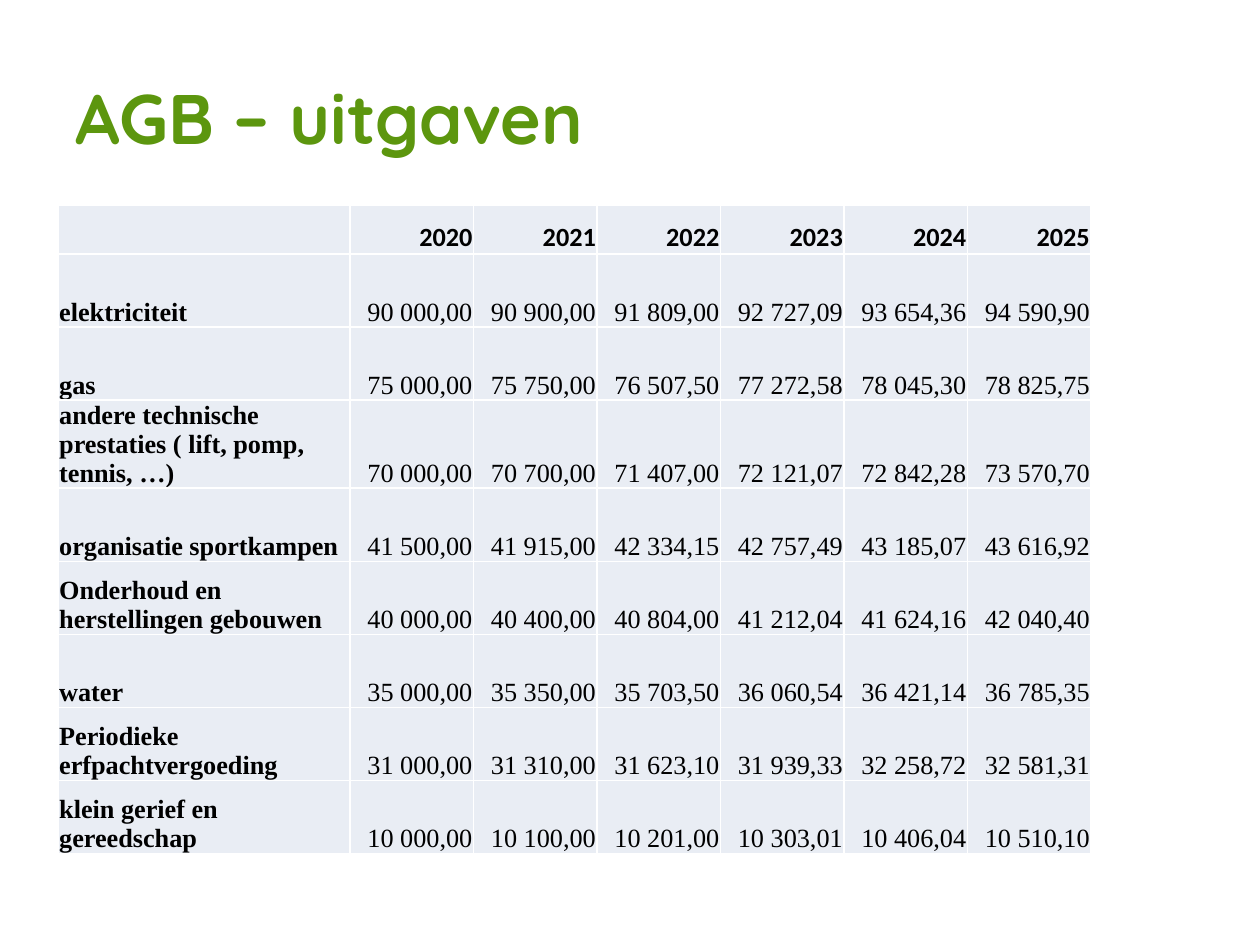
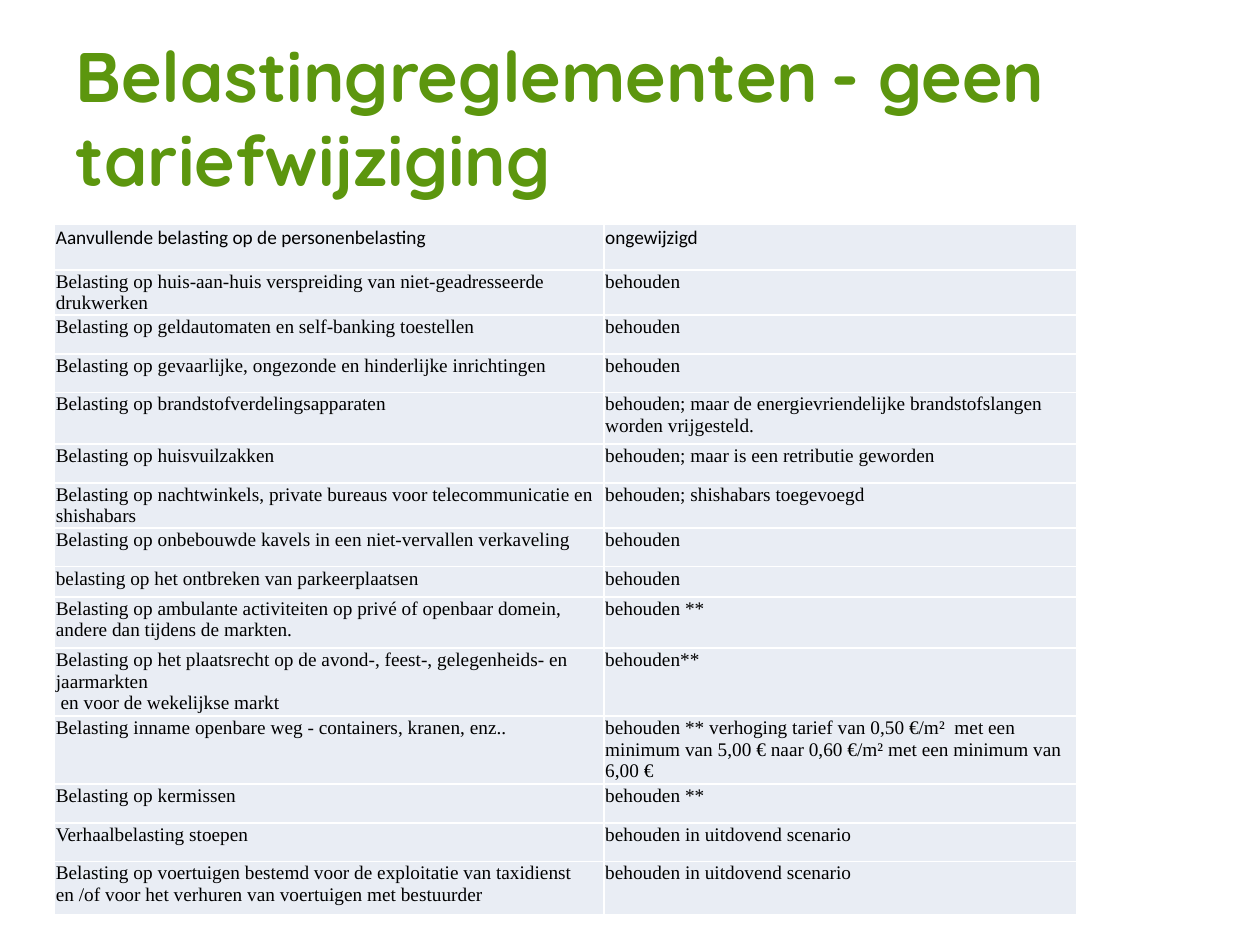
"""Build two slides on municipal expenses and tax regulations."""
import copy

import pptx
import pptx.dml.color
import pptx.enum.text
import pptx.oxml
import pptx.oxml.ns
import pptx.util

Pt = pptx.util.Pt
ALIGN = pptx.enum.text.PP_ALIGN
ANCHOR = pptx.enum.text.MSO_ANCHOR

GREEN, BLACK, WHITE, PALE_BLUE = "5C960E", "000000", "FFFFFF", "E9EDF4"
TITLE_PLACE = {"left": 36, "top": 21.6, "width": 590.4, "height": 90}
TITLE_FONT = {"name": "Quicksand", "size": Pt(40), "bold": True}
CELL_MARGINS = {"margin_left": Pt(0.72), "margin_right": Pt(0.72),
                "margin_top": Pt(0.72), "margin_bottom": Pt(0)}

EXPENSES = [
    ("", "2020", "2021", "2022", "2023", "2024", "2025"),
    ("elektriciteit", "90 000,00", "90 900,00", "91 809,00",
     "92 727,09", "93 654,36", "94 590,90"),
    ("gas", "75 000,00", "75 750,00", "76 507,50",
     "77 272,58", "78 045,30", "78 825,75"),
    ("andere technische prestaties ( lift, pomp, tennis, …)",
     "70 000,00", "70 700,00", "71 407,00",
     "72 121,07", "72 842,28", "73 570,70"),
    ("organisatie sportkampen", "41 500,00", "41 915,00", "42 334,15",
     "42 757,49", "43 185,07", "43 616,92"),
    ("Onderhoud en herstellingen gebouwen",
     "40 000,00", "40 400,00", "40 804,00",
     "41 212,04", "41 624,16", "42 040,40"),
    ("water", "35 000,00", "35 350,00", "35 703,50",
     "36 060,54", "36 421,14", "36 785,35"),
    ("Periodieke erfpachtvergoeding", "31 000,00", "31 310,00", "31 623,10",
     "31 939,33", "32 258,72", "32 581,31"),
    ("klein gerief en gereedschap", "10 000,00", "10 100,00", "10 201,00",
     "10 303,01", "10 406,04", "10 510,10"),
]

TAXES = [
    (25.92, "Aanvullende belasting op de personenbelasting", "ongewijzigd"),
    (25.92, "Belasting op huis-aan-huis verspreiding van niet-geadresseerde "
     "drukwerken", "behouden"),
    (22.1, "Belasting op geldautomaten en self-banking toestellen", "behouden"),
    (22.1, "Belasting op gevaarlijke, ongezonde en hinderlijke inrichtingen",
     "behouden"),
    (29.52, "Belasting op brandstofverdelingsapparaten",
     "behouden; maar de energievriendelijke brandstofslangen worden "
     "vrijgesteld."),
    (22.1, "Belasting op huisvuilzakken",
     "behouden; maar is een retributie geworden"),
    (25.92, "Belasting op nachtwinkels, private bureaus voor telecommunicatie "
     "en shishabars", "behouden; shishabars toegevoegd"),
    (22.1, "Belasting op onbebouwde kavels in een niet-vervallen verkaveling",
     "behouden"),
    (17.28, "belasting op het ontbreken van parkeerplaatsen", "behouden"),
    (29.3, "Belasting op ambulante activiteiten op privé of openbaar domein,\v"
     "andere dan tijdens de markten.", "behouden **"),
    (38.88, "Belasting op het plaatsrecht op de avond-, feest-, gelegenheids- "
     "en jaarmarkten\v en voor de wekelijkse markt", "behouden**"),
    (38.88, "Belasting inname openbare weg - containers, kranen, enz..",
     "behouden ** verhoging tarief van 0,50 €/m²  met een minimum van 5,00 € "
     "naar 0,60 €/m² met een minimum van 6,00 €"),
    (22.1, "Belasting op kermissen", "behouden **"),
    (22.1, "Verhaalbelasting stoepen", "behouden in uitdovend scenario"),
    (30.24, "Belasting op voertuigen bestemd voor de exploitatie van "
     "taxidienst\ven /of voor het verhuren van voertuigen met bestuurder",
     "behouden in uitdovend scenario"),
]


def color(hex_value):
    """Turn a hex string into a colour."""
    return pptx.dml.color.RGBColor.from_string(hex_value)


def apply_format(target, values):
    """Set every attribute named in values on the target."""
    for attribute, value in values.items():
        setattr(target, attribute, value)


def write_text(frame, text, font, ink, alignment):
    """Write one formatted paragraph, line breaks included."""
    paragraph = frame.paragraphs[0]
    paragraph.text = text
    paragraph.alignment = alignment
    for run in paragraph.runs:
        apply_format(run.font, font)
        run.font.color.rgb = color(ink)
    for line_break in paragraph._p.findall(pptx.oxml.ns.qn("a:br")):
        line_break.append(copy.deepcopy(paragraph.runs[0]._r.rPr))


def add_titled_slide(deck, heading):
    """Add a slide with the green heading."""
    slide = deck.slides.add_slide(deck.slide_layouts[5])
    title = slide.shapes.title
    apply_format(title, {side: Pt(v) for side, v in TITLE_PLACE.items()})
    title.text_frame.vertical_anchor = ANCHOR.MIDDLE
    write_text(title.text_frame, heading, TITLE_FONT, GREEN, ALIGN.LEFT)
    return slide


def add_borders(cell):
    """Draw a thin white line on each side of a cell."""
    properties = cell._tc.get_or_add_tcPr()
    for position, side in enumerate(("lnL", "lnR", "lnT", "lnB")):
        properties.insert(position, pptx.oxml.parse_xml(
            f'<a:{side} {pptx.oxml.ns.nsdecls("a")} w="{Pt(1)}"><a:solidFill>'
            f'<a:srgbClr val="{WHITE}"/></a:solidFill></a:{side}>'))


def add_grid(slide, left, top, widths, heights, rows, anchor, cell_style):
    """Add a table whose cell font and alignment come from cell_style."""
    table = slide.shapes.add_table(
        len(rows), len(widths), Pt(left), Pt(top),
        Pt(sum(widths)), Pt(sum(heights))).table
    apply_format(table, {"first_row": False, "horz_banding": False})
    for column, width in zip(table.columns, widths):
        column.width = Pt(width)
    for r, (texts, height) in enumerate(zip(rows, heights)):
        table.rows[r].height = Pt(height)
        for c, text in enumerate(texts):
            cell = table.cell(r, c)
            apply_format(cell, {**CELL_MARGINS, "vertical_anchor": anchor})
            cell.fill.solid()
            cell.fill.fore_color.rgb = color(PALE_BLUE)
            add_borders(cell)
            font, alignment = cell_style(r, c)
            write_text(cell.text_frame, text, font, BLACK, alignment)


def font_for_row(row, size, bold):
    """Use Calibri in the first row and Times New Roman below it."""
    name = "Times New Roman" if row else "Calibri"
    return {"name": name, "size": Pt(size), "bold": bold}


def expense_style(row, column):
    """Bold the years and labels, and align the amounts right."""
    bold = row == 0 or column == 0
    return font_for_row(row, 15, bold), ALIGN.RIGHT if column else ALIGN.LEFT


def tax_style(row, column):
    """Set tax lines in small regular type."""
    return font_for_row(row, 11, False), ALIGN.LEFT


def main():
    """Build and save the deck."""
    deck = pptx.Presentation()
    apply_format(deck, {"slide_width": Pt(720), "slide_height": Pt(540)})

    expenses = add_titled_slide(deck, "AGB – uitgaven")
    add_grid(expenses, 33.12, 117, [167.04] + [70.56] * 6,
             [28.08] + [41.76] * 8, EXPENSES, ANCHOR.BOTTOM, expense_style)

    taxes = add_titled_slide(
        deck, "Belastingreglementen\t- geen tariefwijziging")
    add_grid(taxes, 31.2, 128.3, [313.92, 270], [row[0] for row in TAXES],
             [row[1:] for row in TAXES], ANCHOR.TOP, tax_style)

    deck.save("out.pptx")


if __name__ == "__main__":
    main()
